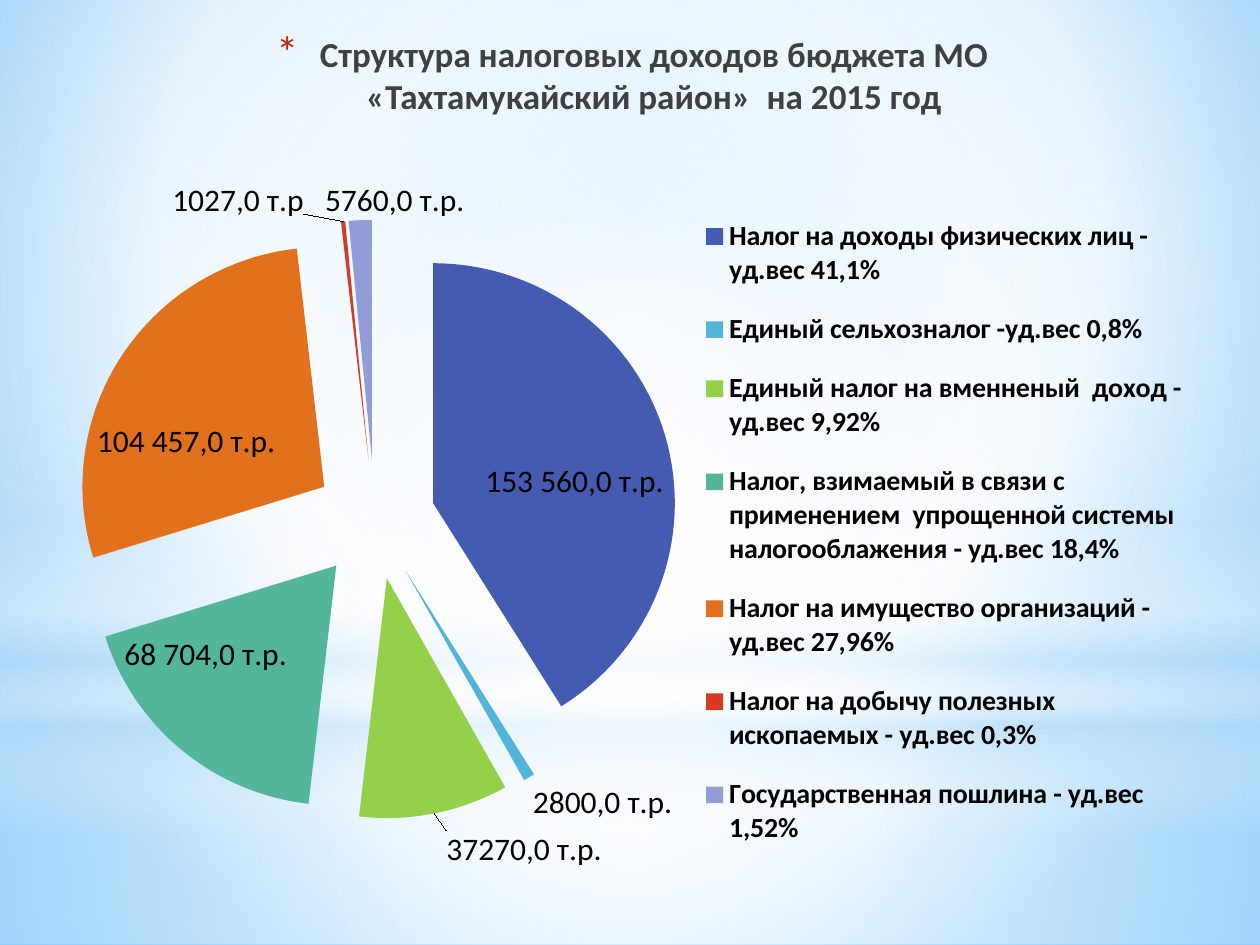
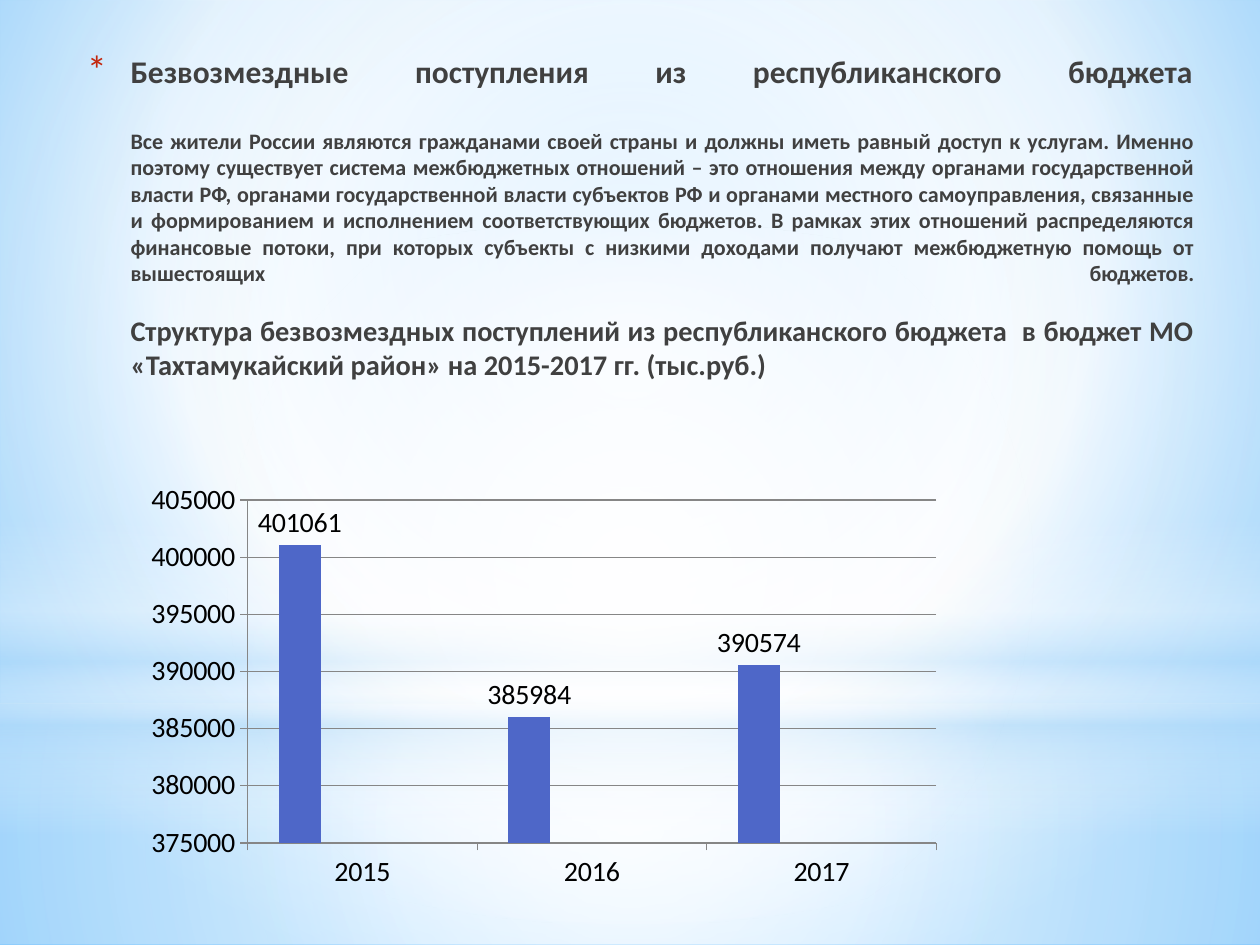
from lxml import etree
from pptx import Presentation
from pptx.chart.data import CategoryChartData
from pptx.dml.color import RGBColor
from pptx.enum import chart as ch, shapes, text
from pptx.oxml import parse_xml
from pptx.oxml.ns import qn
from pptx.util import Pt

# Content
TAXES = [  # legend text, value, label, colour, label inside, label shift
    ("Налог на доходы физических лиц - уд.вес 41,1%",
     153560, "153 560,0 т.р.", "455AB1", True, None),
    ("Единый сельхозналог -уд.вес 0,8%",
     2800, "2800,0 т.р.", "52B4D8", False, None),
    ("Единый налог на вменненый  доход - уд.вес 9,92%",
     37270, "37270,0 т.р.", "94D04A", False, (6, 6)),
    ("Налог, взимаемый в связи с применением  упрощенной системы "
     "налогооблажения - уд.вес 18,4%",
     68704, "68 704,0 т.р.", "53B69B", True, None),
    ("Налог на имущество организаций - уд.вес 27,96%",
     104457, "104 457,0 т.р.", "E2711D", True, None),
    ("Налог на добычу полезных ископаемых - уд.вес 0,3%",
     1027, "1027,0 т.р", "D63A22", False, (-22, 0)),
    ("Государственная пошлина - уд.вес 1,52%",
     5760, "5760,0 т.р.", "929DD8", False, (20, 0)),
]
GRANTS = {"2015": 401061, "2016": 385984, "2017": 390574}
BARS = ["4E67C8", "5ECCF3", "A7EA52", "5DCEAF"]

TAX_HEAD = [("Структура налоговых доходов бюджета МО "
             "«Тахтамукайский район»  на 2015 год", 20)]
GRANT_HEAD = [
    ("Безвозмездные поступления из республиканского бюджета", 18),
    ("Все жители России являются гражданами своей страны и должны иметь "
     "равный доступ к услугам. Именно поэтому существует система "
     "межбюджетных отношений – это отношения между органами государственной "
     "власти РФ, органами государственной власти субъектов РФ и органами "
     "местного самоуправления, связанные и формированием и исполнением "
     "соответствующих бюджетов. В рамках этих отношений распределяются "
     "финансовые потоки, при которых субъекты с низкими доходами получают "
     "межбюджетную помощь от вышестоящих бюджетов.", 12.6),
    ("Структура безвозмездных поступлений из республиканского бюджета  "
     "в бюджет МО «Тахтамукайский район» на 2015-2017 гг. (тыс.руб.)", 16.2),
]

# Chart frames on the slide; the inner parts are measured inside the frame
PIE_BOX, PIE_PLOT = (36.5, 100, 646.5, 420), (0.5, 22.25, 354.5, 345.5)
PIE_KEY = (360, 7.5, 286, 390)
BAR_BOX, BAR_PLOT = (70.5, 236, 623.5, 278), (71, 49.75, 393.5, 196)

# Shared look
FONT, INK, STAR, GREY = "Calibri", "404040", "C3260C", "868686"
WIDE, HIGH = 720, 540
MID = (50, 50, 50, 50)
PALE, SKY = "FFFFFF", "B4DCFA"
BACK = ([(0, "9ED5FF", 100), (60, PALE, 100), (100, "5BB9FF", 100)],
        (20, 10, 20, 60))
LAYERS = [  # box, shape, stops (place, colour, opacity), focus or None
    ((0, 402, WIDE, 138), "RECTANGLE",
     [(0, PALE, 91), (37, PALE, 76), (100, SKY, 79)], MID),
    ((0, 0, WIDE, 402), "RECTANGLE",
     [(0, PALE, 89), (48, PALE, 62), (100, SKY, 79)], MID),
    ((0, 297, WIDE, 180), "RECTANGLE",
     [(0, PALE, 0), (29, PALE, 30), (45, SKY, 40), (55, PALE, 26),
      (65, SKY, 60), (100, PALE, 0)], None),
    ((0, 126, WIDE, 402), "OVAL", [(0, PALE, 100), (56, PALE, 0)], MID),
]
A = "http://schemas.openxmlformats.org/drawingml/2006/main"


def color(code):
    return RGBColor.from_string(code)


def place(box):
    return [Pt(v) for v in box]


def style(obj, **vals):
    for key, val in vals.items():
        setattr(obj, key, val)


def add(up, tag, **vals):
    return etree.SubElement(up, qn(tag), {k: str(v) for k, v in vals.items()})


# Backdrop
def blend(root, stops, focus):
    """Swap the solid fill under root for a gradient."""
    grad = parse_xml(f'<a:gradFill xmlns:a="{A}" rotWithShape="1"/>')
    rows = add(grad, "a:gsLst")
    for pos, code, solid in stops:
        stop = add(rows, "a:gs", pos=pos * 1000)
        tint = add(stop, "a:srgbClr", val=code)
        if solid < 100:
            add(tint, "a:alpha", val=solid * 1000)
    if focus:
        way = add(grad, "a:path", path="circle")
        add(way, "a:fillToRect", **{k: v * 1000 for k, v in zip("ltrb", focus)})
    else:
        add(grad, "a:lin", ang=5400000, scaled=0)
    old = root.find(".//" + qn("a:solidFill"))
    old.getparent().replace(old, grad)


def new_slide(deck):
    slide = deck.slides.add_slide(deck.slide_layouts[6])
    slide.background.fill.solid()
    slide.background.fill.fore_color.rgb = color(PALE)
    blend(slide._element.find(".//" + qn("p:bg")), *BACK)
    for box, kind, stops, focus in LAYERS:
        shape = slide.shapes.add_shape(
            getattr(shapes.MSO_SHAPE, kind), *place(box))
        shape.shadow.inherit = False
        shape.line.fill.background()
        shape.fill.solid()
        shape.fill.fore_color.rgb = color(PALE)
        blend(shape._element.spPr, stops, focus)
    return slide


# Title with a red star before its first line
def title(slide, box, parts, align):
    frame = slide.shapes.add_textbox(*place(box)).text_frame
    style(frame, word_wrap=True, vertical_anchor=text.MSO_ANCHOR.TOP)
    for num, (words, size) in enumerate(parts):
        para = frame.add_paragraph() if num else frame.paragraphs[0]
        para.alignment = align
        props = para._p.get_or_add_pPr()
        props.set("marL", str(Pt(25)))
        props.set("indent", str(0 if num else -Pt(25)))
        if not num:
            add(add(props, "a:buClr"), "a:srgbClr", val=STAR)
            add(props, "a:buSzPct", val=128000)
            add(props, "a:buFont", typeface=FONT)
            add(props, "a:buChar", char="*")
        run = para.add_run()
        run.text = words
        style(run.font, size=Pt(size), name=FONT, bold=True)
        run.font.color.rgb = color(INK)
        # A closing break stretches the last justified line
        if num < len(parts) - 1:
            para.add_line_break()
            for up, tag in ((para._p[-1], "a:rPr"), (para._p, "a:endParaRPr")):
                add(add(up, tag, sz=int(size * 100), b=1), "a:latin",
                    typeface=FONT)


# Charts
def set_layout(up, spot, frame, box, **modes):
    """Put a manual layout at child number spot, scaled to the frame."""
    for old in up.findall(qn("c:layout")):
        up.remove(old)
    node = etree.Element(qn("c:layout"))
    rows = add(node, "c:manualLayout")
    for key, val in modes.items():
        add(rows, "c:" + key, val=val)
    for key, val, full in zip("xywh", box, frame[2:] * 2):
        add(rows, "c:" + key, val=round(val / full, 4))
    up.insert(spot, node)


def add_chart(slide, kind, box, cats, rows, size, plot, form="General"):
    data = CategoryChartData(number_format=form)
    data.categories = cats
    for num, vals in enumerate(rows, 1):
        data.add_series(f"Series {num}", vals)
    chart = slide.shapes.add_chart(kind, *place(box), data).chart
    style(chart, has_title=False, has_legend=False)
    style(chart.font, size=Pt(size), name=FONT)
    chart.font.color.rgb = color("000000")
    area = chart._chartSpace.find(".//" + qn("c:plotArea"))
    set_layout(area, 0, box, plot, layoutTarget="inner",
               xMode="edge", yMode="edge")
    return chart


def tax_pie(slide):
    names, vals = zip(*(tax[:2] for tax in TAXES))
    chart = add_chart(slide, ch.XL_CHART_TYPE.PIE, PIE_BOX, names, [vals],
                      18, PIE_PLOT, "0.0")
    chart.has_legend = True
    key = chart.legend
    style(key, position=ch.XL_LEGEND_POSITION.RIGHT, include_in_layout=False)
    style(key.font, size=Pt(16), bold=True, name=FONT)
    set_layout(key._element, 1, PIE_BOX, PIE_KEY, xMode="edge", yMode="edge")
    pie = chart.plots[0]
    pie.vary_by_categories = True
    row = pie.series[0]
    style(row.data_labels, show_value=True, number_format="0.0",
          number_format_is_linked=False)
    spots = ch.XL_LABEL_POSITION
    for num, (_, _, words, code, inner, shift) in enumerate(TAXES):
        point = row.points[num]
        point.format.fill.solid()
        point.format.fill.fore_color.rgb = color(code)
        label = point.data_label
        label.text_frame.text = words
        font = label.text_frame.paragraphs[0].runs[0].font
        style(font, size=Pt(18), name=FONT)
        font.color.rgb = color("000000")
        label.position = spots.BEST_FIT if inner else spots.OUTSIDE_END
        if shift:
            set_layout(label._get_or_add_dLbl(), 1, PIE_BOX, shift)
    # Pull every slice out
    pull = etree.Element(qn("c:explosion"), val="25")
    row._element.find(qn("c:dPt")).addprevious(pull)


def grant_bars(slide):
    none = [None] * len(GRANTS)
    rows = [list(GRANTS.values())] + [none] * (len(BARS) - 1)
    chart = add_chart(slide, ch.XL_CHART_TYPE.COLUMN_CLUSTERED, BAR_BOX,
                      list(GRANTS), rows, 16, BAR_PLOT)
    plot = chart.plots[0]
    style(plot, gap_width=150, overlap=0, vary_by_categories=False)
    for bar, code in zip(plot.series, BARS):
        bar.format.fill.solid()
        bar.format.fill.fore_color.rgb = color(code)
    style(plot.series[0].data_labels, show_value=True,
          position=ch.XL_LABEL_POSITION.OUTSIDE_END)
    cat, val = chart.category_axis, chart.value_axis
    style(val, minimum_scale=375000, maximum_scale=405000, major_unit=5000,
          has_major_gridlines=True)
    for axis in (cat, val):
        style(axis, major_tick_mark=ch.XL_TICK_MARK.OUTSIDE,
              minor_tick_mark=ch.XL_TICK_MARK.NONE)
    for part in (cat, val, val.major_gridlines):
        part.format.line.width = Pt(0.75)
        part.format.line.color.rgb = color(GREY)


def main():
    deck = Presentation()
    style(deck, slide_width=Pt(WIDE), slide_height=Pt(HIGH))

    slide = new_slide(deck)
    title(slide, (105, 15, 512.5, 73.5), TAX_HEAD, text.PP_ALIGN.CENTER)
    tax_pie(slide)

    slide = new_slide(deck)
    title(slide, (42.5, 26, 646.5, 90), GRANT_HEAD, text.PP_ALIGN.JUSTIFY)
    grant_bars(slide)

    deck.save("out.pptx")


if __name__ == "__main__":
    main()
